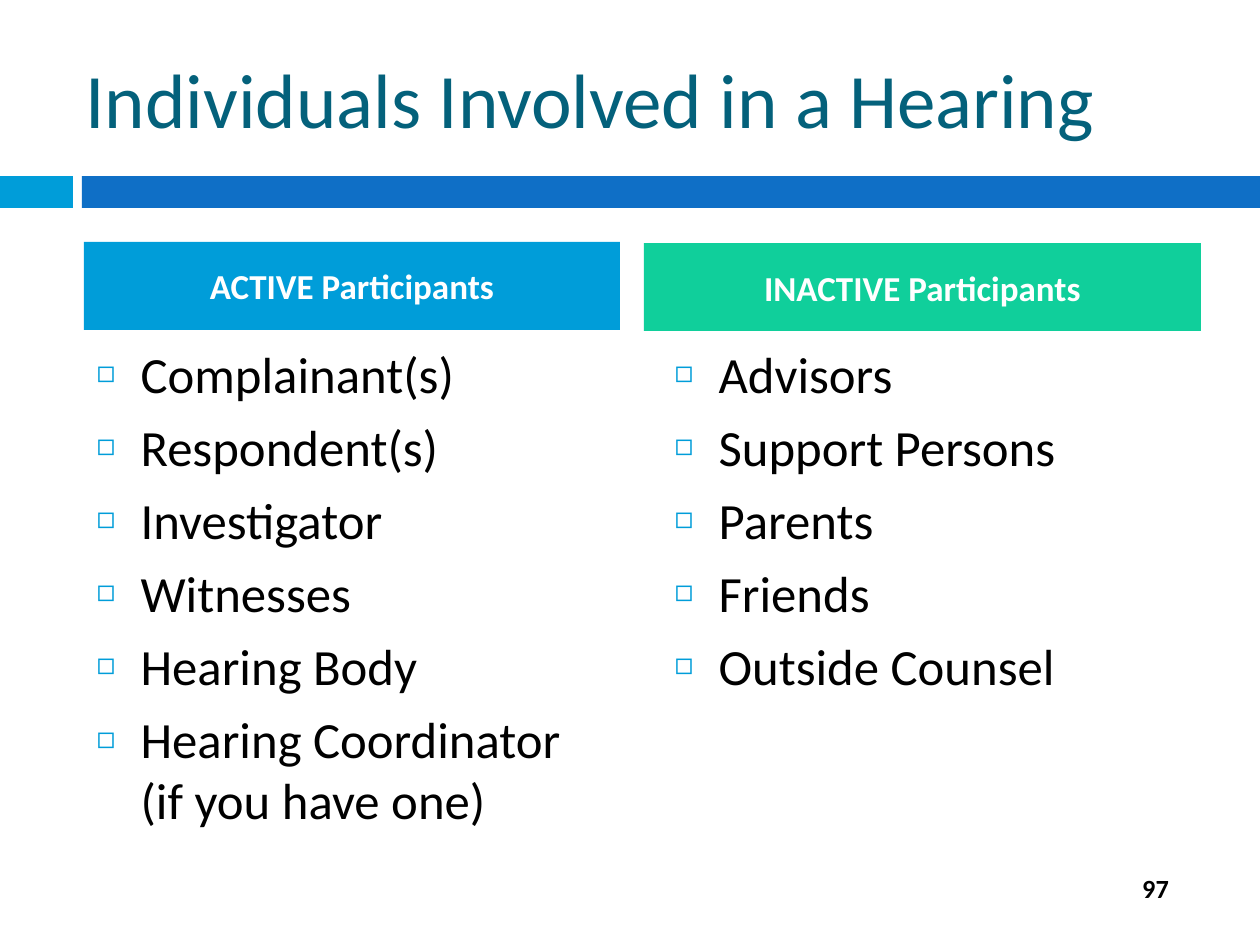
from lxml import etree
from pptx import Presentation
from pptx.dml.color import RGBColor
from pptx.enum.shapes import MSO_SHAPE
from pptx.enum.text import MSO_ANCHOR, MSO_AUTO_SIZE, PP_ALIGN
from pptx.oxml.ns import qn
from pptx.util import Pt

LEFT, CENTER = PP_ALIGN.LEFT, PP_ALIGN.CENTER
TOP, MIDDLE = MSO_ANCHOR.TOP, MSO_ANCHOR.MIDDLE
EMU_PER_PX = 914400 / 126
COMPARISON_LAYOUT = 4
FONT = "Calibri"
COLORS = {"title": "04617B", "sky": "009DD9", "blue": "0F6FC6",
          "green": "10CF9B", "white": "FFFFFF", "black": "000000"}

# Content: boxes are left, top, width, height in px
TITLE = "Individuals Involved in a Hearing"
TITLE_BOX = (73, 38, 1124, 120)
BANDS = [((0, 176, 73, 32), "sky"), ((82, 176, 1178, 32), "blue")]
COLUMNS = [
    {"heading": "ACTIVE Participants", "fill": "sky",
     "heading_box": (84, 242, 536, 88), "list_box": (84, 336, 536, 494),
     "people": ["Complainant(s)", "Respondent(s)", "Investigator", "Witnesses",
                "Hearing Body", "Hearing Coordinator (if you have one)"]},
    {"heading": "INACTIVE Participants", "fill": "green",
     "heading_box": (644, 243, 557, 88), "list_box": (662, 336, 536, 494),
     "people": ["Advisors", "Support Persons", "Parents", "Friends",
                "Outside Counsel"]},
]
PAGE_NUMBER = "97"
PAGE_NUMBER_BOX = (1103, 861, 105, 54)

# Text formats
TITLE_FORMAT = {"size": Pt(44), "bold": False, "color": "title"}
HEADING_FORMAT = {"size": Pt(20), "bold": True, "color": "white"}
LIST_FORMAT = {"size": Pt(29), "bold": False, "color": "black"}
NUMBER_FORMAT = {"size": Pt(15), "bold": True, "color": "black"}


def px(value):
    return round(value * EMU_PER_PX)


def place(shape, box):
    for name, value in zip(("left", "top", "width", "height"), box):
        setattr(shape, name, px(value))


def paint(shape, color):
    shape.fill.solid()
    shape.fill.fore_color.rgb = RGBColor.from_string(COLORS[color])


def add_bullet(paragraph):
    properties = paragraph._p.get_or_add_pPr()
    properties.set("marL", str(px(44)))
    properties.set("indent", str(-px(44)))
    color = etree.SubElement(properties, qn("a:buClr"))
    etree.SubElement(color, qn("a:srgbClr"), val=COLORS["sky"])
    etree.SubElement(properties, qn("a:buSzPct"), val="60000")
    etree.SubElement(properties, qn("a:buChar"), char="◻")


def write(shape, lines, text_format, align=LEFT, anchor=MIDDLE, bullets=False):
    frame = shape.text_frame
    frame.word_wrap = True
    frame.auto_size = MSO_AUTO_SIZE.NONE
    frame.vertical_anchor = anchor
    for index, line in enumerate(lines):
        paragraph = frame.add_paragraph() if index else frame.paragraphs[0]
        paragraph.alignment = align
        paragraph.space_before = Pt(7 if index else 0)
        if bullets:
            add_bullet(paragraph)
        run = paragraph.add_run()
        run.text = line
        run.font.name = FONT
        for name in ("size", "bold"):
            setattr(run.font, name, text_format[name])
        run.font.color.rgb = RGBColor.from_string(COLORS[text_format["color"]])


def main():
    presentation = Presentation()
    presentation.slide_width, presentation.slide_height = px(1260), px(945)
    layout = presentation.slide_layouts[COMPARISON_LAYOUT]
    slide = presentation.slides.add_slide(layout)

    # Bands under the title
    for box, color in BANDS:
        band = slide.shapes.add_shape(MSO_SHAPE.RECTANGLE, *map(px, box))
        band.shadow.inherit = False
        band.line.fill.background()
        paint(band, color)

    # Title
    title = slide.shapes.title
    place(title, TITLE_BOX)
    write(title, [TITLE], TITLE_FORMAT)

    # Heading and list of each column
    placeholders = list(slide.placeholders)[1:]
    for column, heading, people in zip(COLUMNS, placeholders[::2], placeholders[1::2]):
        place(heading, column["heading_box"])
        paint(heading, column["fill"])
        write(heading, [column["heading"]], HEADING_FORMAT, align=CENTER)
        place(people, column["list_box"])
        write(people, column["people"], LIST_FORMAT, anchor=TOP, bullets=True)

    # Page number
    number = slide.shapes.add_textbox(*map(px, PAGE_NUMBER_BOX))
    write(number, [PAGE_NUMBER], NUMBER_FORMAT, align=CENTER)

    presentation.save("out.pptx")


if __name__ == "__main__":
    main()
